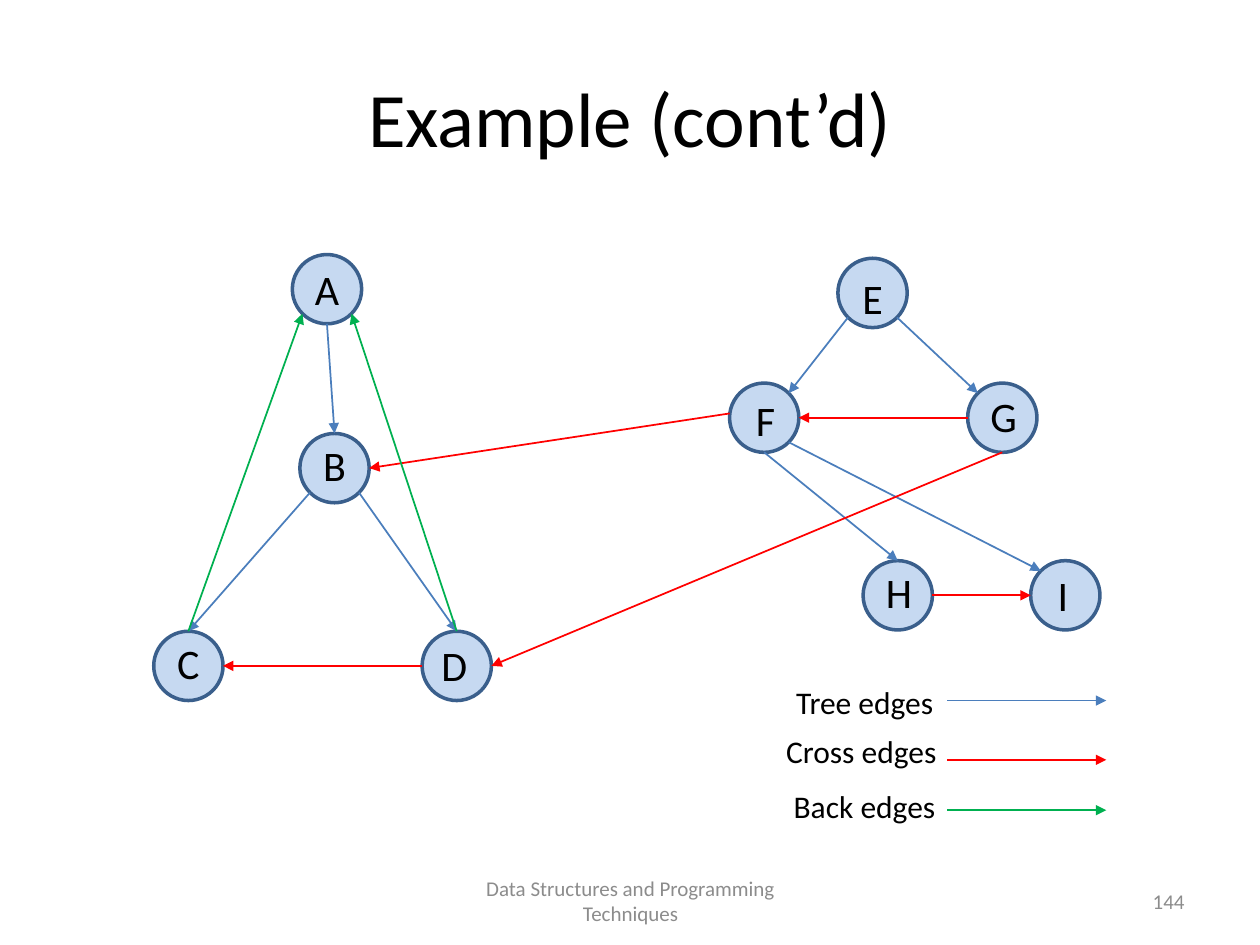
from math import cos, radians, sin

from lxml import etree
from pptx import Presentation
from pptx.dml.color import RGBColor
from pptx.enum.shapes import MSO_CONNECTOR, MSO_SHAPE
from pptx.enum.text import MSO_ANCHOR, PP_ALIGN
from pptx.oxml.ns import qn
from pptx.util import Inches, Pt

STRAIGHT = MSO_CONNECTOR.STRAIGHT
OVAL = MSO_SHAPE.OVAL
TOP, MIDDLE = MSO_ANCHOR.TOP, MSO_ANCHOR.MIDDLE
LEFT, CENTER, RIGHT = PP_ALIGN.LEFT, PP_ALIGN.CENTER, PP_ALIGN.RIGHT

COLORS = {
    "text": "000000",
    "footer": "8C8C8C",
    "node": "C6D9F1",
    "outline": "3A5F8C",
    "tree": "4B7EBC",
    "cross": "FF0000",
    "back": "00B050",
}
FONT = "Calibri"
DIAMETER = 0.55

# Node: left, top, letter offset x, letter offset y
NODES = {
    "A": (2.32, 2.02, 0.04, 0.02),
    "B": (2.38, 3.44, 0.04, 0),
    "C": (1.22, 5.01, 0.04, 0),
    "D": (3.35, 5.01, 0.02, 0.02),
    "E": (6.65, 2.05, 0.04, 0.06),
    "F": (5.79, 3.04, 0.05, 0.04),
    "G": (7.68, 3.04, 0.05, 0.01),
    "H": (6.85, 4.45, 0.05, 0),
    "I": (8.18, 4.45, 0.02, 0.02),
}
# Edge: start node, angle on it, end node, angle on it, clockwise from the right
EDGES = [
    ("A", 90, "B", 270, "tree"),
    ("B", 135, "C", 270, "tree"),
    ("B", 45, "D", 270, "tree"),
    ("E", 135, "F", 315, "tree"),
    ("E", 45, "G", 225, "tree"),
    ("F", 90, "H", 270, "tree"),
    ("F", 45, "I", 225, "tree"),
    ("G", 180, "F", 0, "cross"),
    ("G", 90, "D", 0, "cross"),
    ("D", 180, "C", 0, "cross"),
    ("F", 187, "B", 0, "cross"),
    ("H", 0, "I", 180, "cross"),
    ("D", 270, "A", 45, "back"),
    ("C", 270, "A", 135, "back"),
]
# Legend: label, kind, label x, label y, arrow y
LEGEND = [
    ("Tree edges", "tree", 0.08, 0, 0.19),
    ("Cross edges", "cross", 0, 0.39, 0.66),
    ("Back edges", "back", 0.06, 0.83, 1.06),
]


def rgb(name):
    return RGBColor.from_string(COLORS[name])


def write(tf, text, size=18, color="text", align=LEFT, anchor=TOP):
    tf.word_wrap = True
    tf.vertical_anchor = anchor
    p = tf.paragraphs[0]
    p.alignment = align
    r = p.add_run()
    r.text = text
    r.font.name = FONT
    r.font.size = Pt(size)
    r.font.color.rgb = rgb(color)


def add_text(s, text, x, y, w, h, **fmt):
    box = s.shapes.add_textbox(Inches(x), Inches(y), Inches(w), Inches(h))
    write(box.text_frame, text, **fmt)


def add_arrow(s, start, end, kind):
    points = [Inches(v) for v in (*start, *end)]
    line = s.shapes.add_connector(STRAIGHT, *points)
    line.line.color.rgb = rgb(kind)
    line.line.width = Pt(1)
    ln = line.line._get_or_add_ln()
    etree.SubElement(ln, qn("a:tailEnd"), type="triangle")
    etree.SubElement(line._element.spPr, qn("a:effectLst"))


def add_node(s, x, y):
    sp = s.shapes.add_shape(OVAL, Inches(x), Inches(y),
                            Inches(DIAMETER), Inches(DIAMETER))
    sp.shadow.inherit = False
    sp.fill.solid()
    sp.fill.fore_color.rgb = rgb("node")
    sp.line.color.rgb = rgb("outline")
    sp.line.width = Pt(2)


def rim(x, y, angle):
    radius = DIAMETER / 2
    turn = radians(angle)
    return x + radius * (1 + cos(turn)), y + radius * (1 + sin(turn))


def add_title(s, x, y, w, h):
    title = s.shapes.title
    title.left, title.top = Inches(x), Inches(y)
    title.width, title.height = Inches(w), Inches(h)
    write(title.text_frame, "Example (cont’d)", size=44, align=CENTER, anchor=MIDDLE)


def add_graph(s, x, y):
    places = {name: (x + left, y + top) for name, (left, top, *_) in NODES.items()}
    for place in places.values():
        add_node(s, *place)
    for start, leave, end, arrive, kind in EDGES:
        add_arrow(s, rim(*places[start], leave), rim(*places[end], arrive), kind)
    for name, (left, top, dx, dy) in NODES.items():
        add_text(s, name, x + left + dx, y + top + dy, 0.47, 0.5,
                 size=24, align=CENTER)


def add_legend(s, x, y):
    for label, kind, dx, dy, arrow_y in LEGEND:
        add_arrow(s, (x + 1.38, y + arrow_y), (x + 2.64, y + arrow_y), kind)
        add_text(s, label, x + dx, y + dy, 1.61, 0.4)


def add_footer(s, y, h):
    fmt = {"size": 12, "color": "footer", "anchor": MIDDLE}
    add_text(s, "Data Structures and Programming Techniques",
             3.42, y, 3.17, h, align=CENTER, **fmt)
    add_text(s, "144", 7.17, y, 2.33, h, align=RIGHT, **fmt)


def main():
    prs = Presentation()
    prs.slide_width, prs.slide_height = Inches(10), Inches(7.5)
    s = prs.slides.add_slide(prs.slide_layouts[5])
    add_title(s, 0.5, 0.3, 9, 1.25)
    add_graph(s, 0, 0)
    add_legend(s, 6.14, 5.37)
    add_footer(s, 6.95, 0.4)
    prs.save("out.pptx")


if __name__ == "__main__":
    main()
